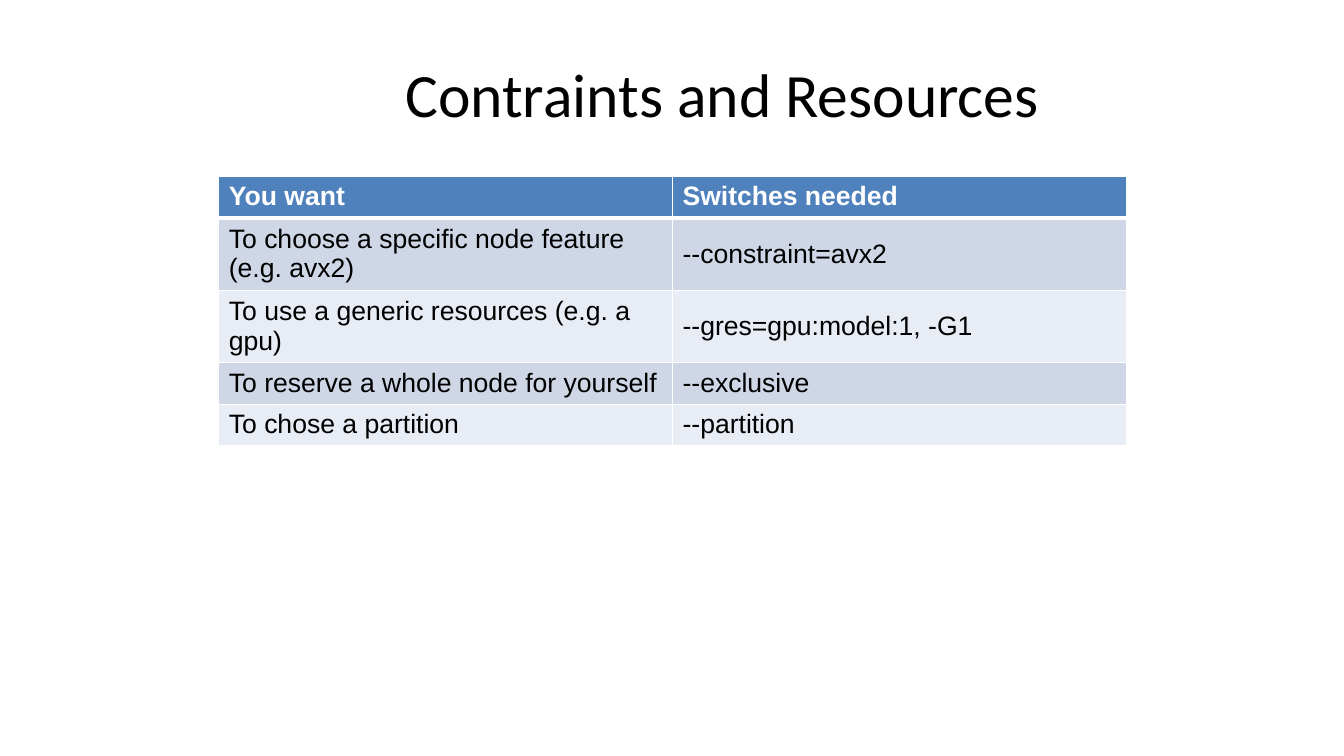
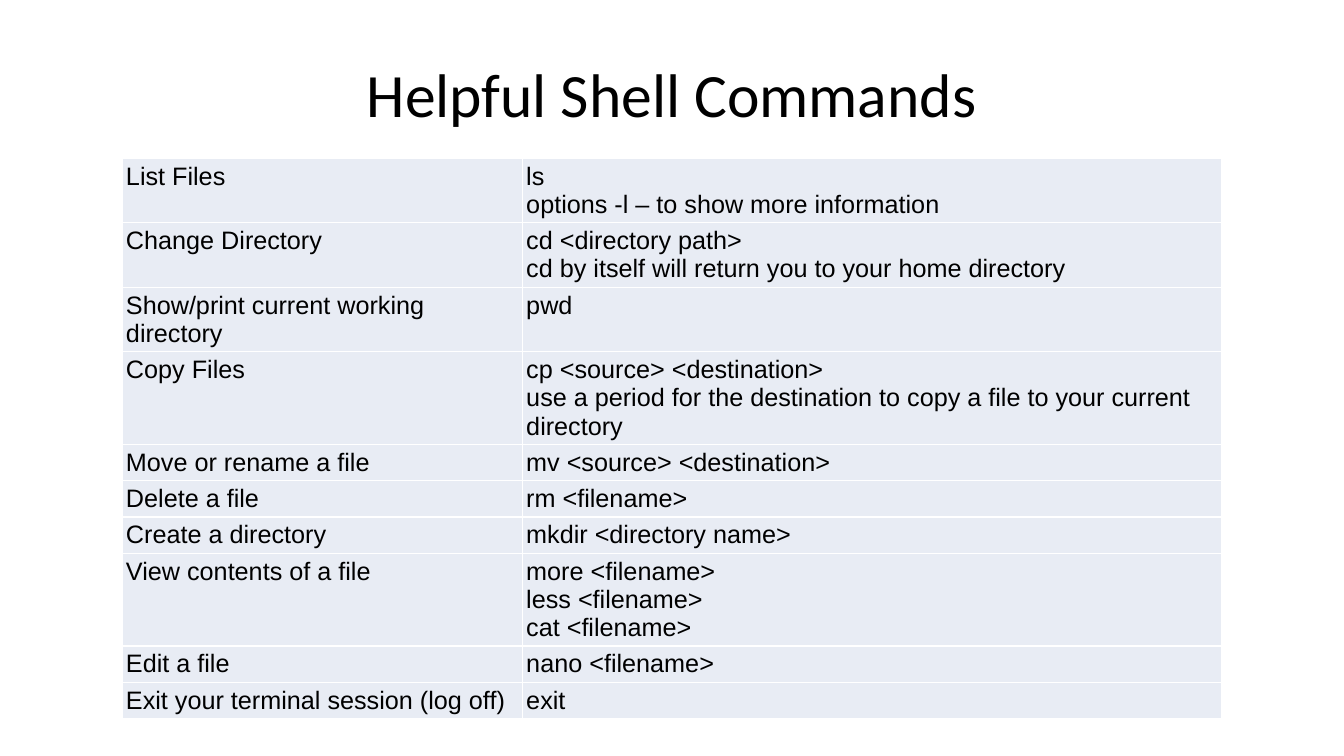
from lxml.etree import SubElement
from pptx import Presentation
from pptx.dml.color import RGBColor
from pptx.enum.text import MSO_ANCHOR, PP_ALIGN
from pptx.oxml.ns import qn
from pptx.util import Inches, Pt

WIDE, HIGH = Inches(13.33), Inches(7.5)
WHITE, BLACK = "FFFFFF", "000000"
HEAD, DARK, LIGHT = "4F81BD", "CFD7E7", "E8ECF4"

# Each row: text lines it takes up, then its two cells
NEEDS = [
    (1, "You want", "Switches needed"),
    (2, "To choose a specific node feature (e.g. avx2)", "--constraint=avx2"),
    (2, "To use a generic resources (e.g. a gpu)", "--gres=gpu:model:1, -G1"),
    (1, "To reserve a whole node for yourself", "--exclusive"),
    (1, "To chose a partition", "--partition"),
]
TASKS = [
    (2, "List Files", "ls\noptions -l – to show more information"),
    (2, "Change Directory",
     "cd <directory path>\ncd by itself will return you to your home directory"),
    (2, "Show/print current working directory", "pwd"),
    (3, "Copy Files",
     "cp <source> <destination>\n"
     "use a period for the destination to copy a file to your current directory"),
    (1, "Move or rename a file", "mv <source> <destination>"),
    (1, "Delete a file", "rm <filename>"),
    (1, "Create a directory", "mkdir <directory name>"),
    (3, "View contents of a file", "more <filename>\nless <filename>\ncat <filename>"),
    (1, "Edit a file", "nano <filename>"),
    (1, "Exit your terminal session (log off)", "exit"),
]


def paint(hue):
    return RGBColor.from_string(hue)


def style(frame, face, size, hue, bold=False, align=PP_ALIGN.LEFT):
    for para in frame.paragraphs:
        para.alignment = align
        font = para.font
        font.name, font.size, font.bold = face, Pt(size), bold
        font.color.rgb = paint(hue)


def place_title(layout):
    title = layout.placeholders[0]
    title.left, title.top = int(WIDE * 0.05), int(HIGH * 0.04)
    title.width, title.height = int(WIDE * 0.9), Inches(1.25)


def add_page(deck, layout, text, indent=0):
    page = deck.slides.add_slide(layout)
    frame = page.shapes.title.text_frame
    frame.text = text
    frame.vertical_anchor = MSO_ANCHOR.MIDDLE
    style(frame, "Calibri", 44, BLACK, align=PP_ALIGN.CENTER)
    if indent:
        props = frame.paragraphs[0]._p.get_or_add_pPr()
        props.set("marL", str(Inches(indent)))
        props.set("indent", "0")
    return page


def edge(cell, top=1, base=1):
    """Draw white cell borders; top and base are widths in points."""
    props = cell._tc.get_or_add_tcPr()
    for side, width in zip("LRTB", (1, 1, top, base)):
        line = SubElement(props, qn(f"a:ln{side}"), w=str(Pt(width)))
        fill = SubElement(line, qn("a:solidFill"))
        SubElement(fill, qn("a:srgbClr"), val=WHITE)


def add_grid(page, rows, left, top, cols, size, pitch, pad, head=False):
    """Add a table; pitch is the line height, pad the (x, y) cell margins."""
    frame = page.shapes.add_table(len(rows), len(cols), Inches(left), Inches(top),
                                  Inches(sum(cols)), Inches(1))
    grid = frame.table
    grid.first_row, grid.horz_banding = head, False
    for col, width in zip(grid.columns, cols):
        col.width = Inches(width)
    for i, (lines, *texts) in enumerate(rows):
        grid.rows[i].height = Inches(lines * pitch + 2 * pad[1])
        title = head and i == 0
        band = HEAD if title else DARK if head and i % 2 else LIGHT
        for j, text in enumerate(texts):
            cell = grid.cell(i, j)
            cell.text = text
            cell.margin_left = cell.margin_right = Inches(pad[0])
            cell.margin_top = cell.margin_bottom = Inches(pad[1])
            mid = head and not title
            cell.vertical_anchor = MSO_ANCHOR.MIDDLE if mid else MSO_ANCHOR.TOP
            edge(cell, top=3 if head and i == 1 else 1, base=3 if title else 1)
            cell.fill.solid()
            cell.fill.fore_color.rgb = paint(band)
            style(cell.text_frame, "Arial", size, WHITE if title else BLACK, title)


def main():
    deck = Presentation()
    deck.slide_width, deck.slide_height = WIDE, HIGH
    layout = deck.slide_layouts.get_by_name("Title Only")
    place_title(layout)

    page = add_page(deck, layout, "Contraints and Resources", indent=1)
    add_grid(page, NEEDS, 2.17, 1.75, (4.5, 4.5), 19, 0.31, (0.1, 0.05), head=True)

    page = add_page(deck, layout, "Helpful Shell Commands")
    add_grid(page, TASKS, 1.21, 1.57, (3.97, 6.94), 18, 0.28, (0.04, 0.04))

    deck.save("out.pptx")


if __name__ == "__main__":
    main()
